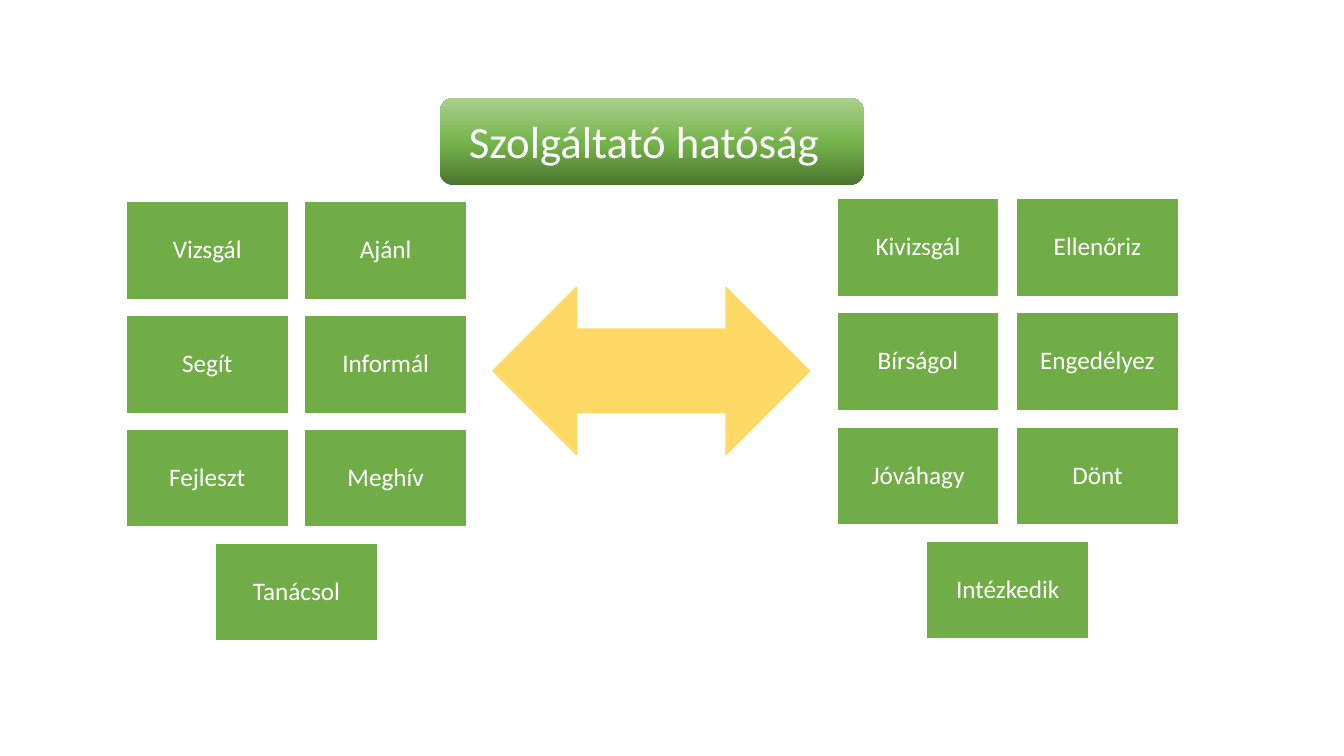
from copy import deepcopy
from pptx import Presentation
from pptx.dml.color import RGBColor
from pptx.enum.shapes import MSO_SHAPE
from pptx.enum.text import MSO_ANCHOR, MSO_AUTO_SIZE, PP_ALIGN
from pptx.oxml.ns import qn
from pptx.util import Inches, Pt

GREEN, GOLD, WHITE = "70AD47", "FFD966", "FFFFFF"
FADE = [(0, "4B7430"), (0.48, "74B349"), (1, "A9D18E")]
HELP = ["Vizsgál", "Ajánl", "Segít", "Informál", "Fejleszt", "Meghív", "Tanácsol"]
RULE = ["Kivizsgál", "Ellenőriz", "Bírságol", "Engedélyez", "Jóváhagy", "Dönt", "Intézkedik"]


def paint(color, code):
    color.rgb = RGBColor.from_string(code)


def write(frame, text, size, align):
    frame.text = text
    frame.word_wrap = True
    para = frame.paragraphs[0]
    para.alignment = align
    font = para.runs[0].font
    font.name = "Calibri"
    font.size = Pt(size)
    paint(font.color, WHITE)


def add_block(slide, kind, left, top, width, height, fill, line):
    block = slide.shapes.add_shape(
        kind, Inches(left), Inches(top), Inches(width), Inches(height))
    block.shadow.inherit = False
    block.fill.solid()
    paint(block.fill.fore_color, fill)
    paint(block.line.color, line)
    block.line.width = Pt(1)
    return block


def add_tiles(slide, left, top, width, height, words):
    tile, tall = 1.61, 0.97
    step = width - tile
    drop = (height - tall) / 3
    for i, word in enumerate(words):
        row, col = divmod(i, 2)
        if i == len(words) - 1:
            col = 0.5
        box = add_block(slide, MSO_SHAPE.RECTANGLE, left + col * step,
                        top + row * drop, tile, tall, GREEN, WHITE)
        frame = box.text_frame
        frame.margin_left = frame.margin_right = Inches(0.07)
        frame.margin_top = frame.margin_bottom = Inches(0.07)
        frame.vertical_anchor = MSO_ANCHOR.MIDDLE
        write(frame, word, 18, PP_ALIGN.CENTER)
        frame.paragraphs[0].line_spacing = 0.9


def add_title(slide, left, top, width, height):
    plate = add_block(slide, MSO_SHAPE.ROUNDED_RECTANGLE, left, top,
                      width, height, GREEN, GREEN)
    plate.line.fill.background()
    plate.fill.gradient()
    plate.fill.gradient_angle = 90
    stops = plate._element.spPr.find(".//" + qn("a:gsLst"))
    stops.append(deepcopy(stops[0]))
    for stop, (place, code) in zip(plate.fill.gradient_stops, FADE):
        stop.position = place
        paint(stop.color, code)

    title = slide.shapes.title
    title.left, title.top = Inches(left + 0.19), Inches(top + 0.11)
    title.width, title.height = Inches(width - 0.03), Inches(0.64)
    frame = title.text_frame
    frame.vertical_anchor = MSO_ANCHOR.TOP
    frame.auto_size = MSO_AUTO_SIZE.SHAPE_TO_FIT_TEXT
    write(frame, "Szolgáltató hatóság", 32, PP_ALIGN.LEFT)
    plate._element.addnext(title._element)


def main():
    deck = Presentation()
    deck.slide_width, deck.slide_height = Inches(13.33), Inches(7.5)
    slide = deck.slides.add_slide(deck.slide_layouts[5])
    add_tiles(slide, 8.3, 1.97, 3.39, 4.37, RULE)
    add_title(slide, 4.36, 0.97, 4.21, 0.87)
    add_tiles(slide, 1.25, 2, 3.38, 4.36, HELP)
    add_block(slide, MSO_SHAPE.LEFT_RIGHT_ARROW, 4.89, 2.85, 3.14, 1.66, GOLD, GOLD)
    deck.save("out.pptx")


if __name__ == "__main__":
    main()
